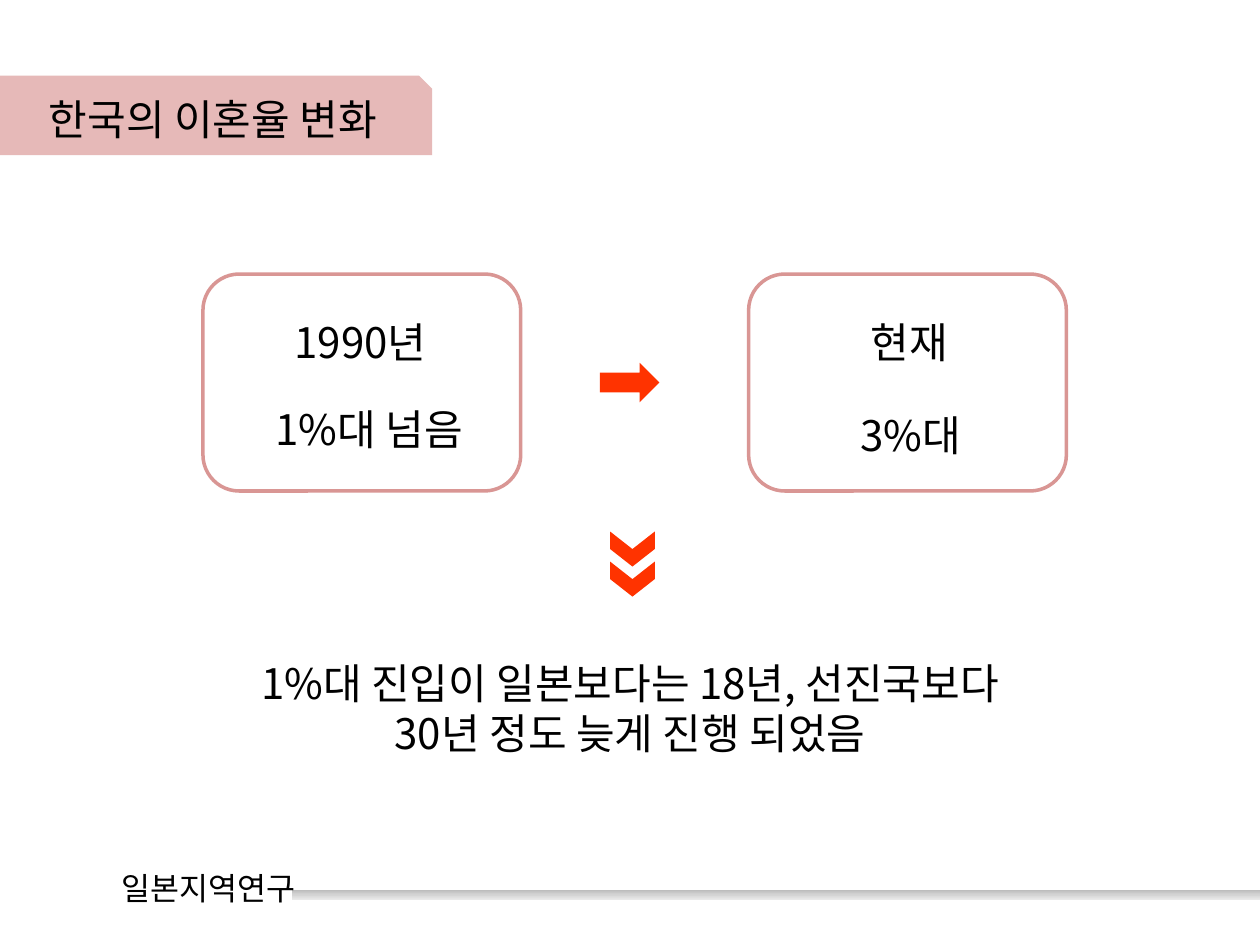
from lxml import etree
from pptx import Presentation
from pptx import util as u
from pptx.dml.color import RGBColor
from pptx.enum import shapes, text
from pptx.oxml.ns import qn

MSO = shapes.MSO_SHAPE


def color(value):
    return RGBColor.from_string(value)


class DivorceRateSlide:
    font = "Noto Sans CJK KR"
    ink = "000000"
    accent = "FF3300"
    outline = "D99694"

    def __init__(self, slide):
        self.slide = slide

    def shape(self, preset, box, fill=None, line=None, rotation=0):
        item = self.slide.shapes.add_shape(preset, *map(u.Pt, box))
        item.shadow.inherit = False
        item.rotation = rotation
        if fill:
            item.fill.solid()
            item.fill.fore_color.rgb = color(fill)
        else:
            item.fill.background()
        if line:
            item.line.color.rgb = color(line)
            item.line.width = u.Pt(2)
        else:
            item.line.fill.background()
        return item

    def add_words(self, item, words, size=24, align=text.PP_ALIGN.CENTER,
                  anchor=text.MSO_ANCHOR.MIDDLE):
        frame = item.text_frame
        frame.word_wrap = True
        frame.vertical_anchor = anchor
        paragraph = frame.paragraphs[0]
        paragraph.alignment = align
        run = paragraph.add_run()
        run.text = words
        run.font.size = u.Pt(size)
        run.font.name = self.font
        run.font.color.rgb = color(self.ink)
        east_asian = etree.SubElement(run._r.get_or_add_rPr(), qn("a:ea"))
        east_asian.set("typeface", self.font)

    def label(self, words, box, align=text.PP_ALIGN.LEFT):
        item = self.slide.shapes.add_textbox(*map(u.Pt, box))
        self.add_words(item, words, align=align, anchor=text.MSO_ANCHOR.TOP)

    def gradient_bar(self, box, stops):
        bar = self.shape(MSO.RECTANGLE, box)
        bar.fill.gradient()
        bar.fill.gradient_angle = 270
        stop_list = bar._element.spPr.find(qn("a:gradFill")).find(qn("a:gsLst"))
        for stop in list(stop_list):
            stop_list.remove(stop)
        for percent, value in stops:
            stop = etree.SubElement(stop_list, qn("a:gs"), pos=str(percent * 1000))
            etree.SubElement(stop, qn("a:srgbClr"), val=value)


def main():
    deck = Presentation()
    deck.slide_width, deck.slide_height = u.Pt(720), u.Pt(540)
    page = DivorceRateSlide(deck.slides.add_slide(deck.slide_layouts[6]))

    page.gradient_bar((167, 508.3, 553, 5.8),
                      [(0, "B8B8B8"), (50, "D3D3D3"), (100, "E9E9E9")])
    footer = page.shape(MSO.ROUNDED_RECTANGLE, (54, 491, 130.3, 32.4))
    page.add_words(footer, "일본지역연구", size=18)

    page.shape(MSO.RIGHT_ARROW, (342.8, 207.4, 34, 22.5), page.accent)
    for chevron_top in (301, 318.2):
        page.shape(MSO.CHEVRON, (351.4, chevron_top, 20, 25.5), page.accent,
                   rotation=90)

    title = page.shape(MSO.SNIP_1_RECTANGLE, (0, 43.2, 247, 45.4), "E6B9B8")
    page.add_words(title, "한국의 이혼율 변화")

    periods = [
        (116, ("1990년", 161.3), ("1%대 넘음", 150.5, 226.8)),
        (427.8, ("현재", 490.3), ("3%대", 484.6, 230.4)),
    ]
    for card_left, (period, period_left), (rate, rate_left, rate_top) in periods:
        page.shape(MSO.ROUNDED_RECTANGLE, (card_left, 156.6, 181.6, 124),
                   line=page.outline)
        page.label(period, (period_left, 177.1, 108, 36))
        page.label(rate, (rate_left, rate_top, 136, 36))

    page.label("1%대 진입이 일본보다는 18년, 선진국보다 30년 정도 늦게 진행 되었음",
               (139, 372.2, 442, 65.5), text.PP_ALIGN.CENTER)
    deck.save("out.pptx")


if __name__ == "__main__":
    main()
